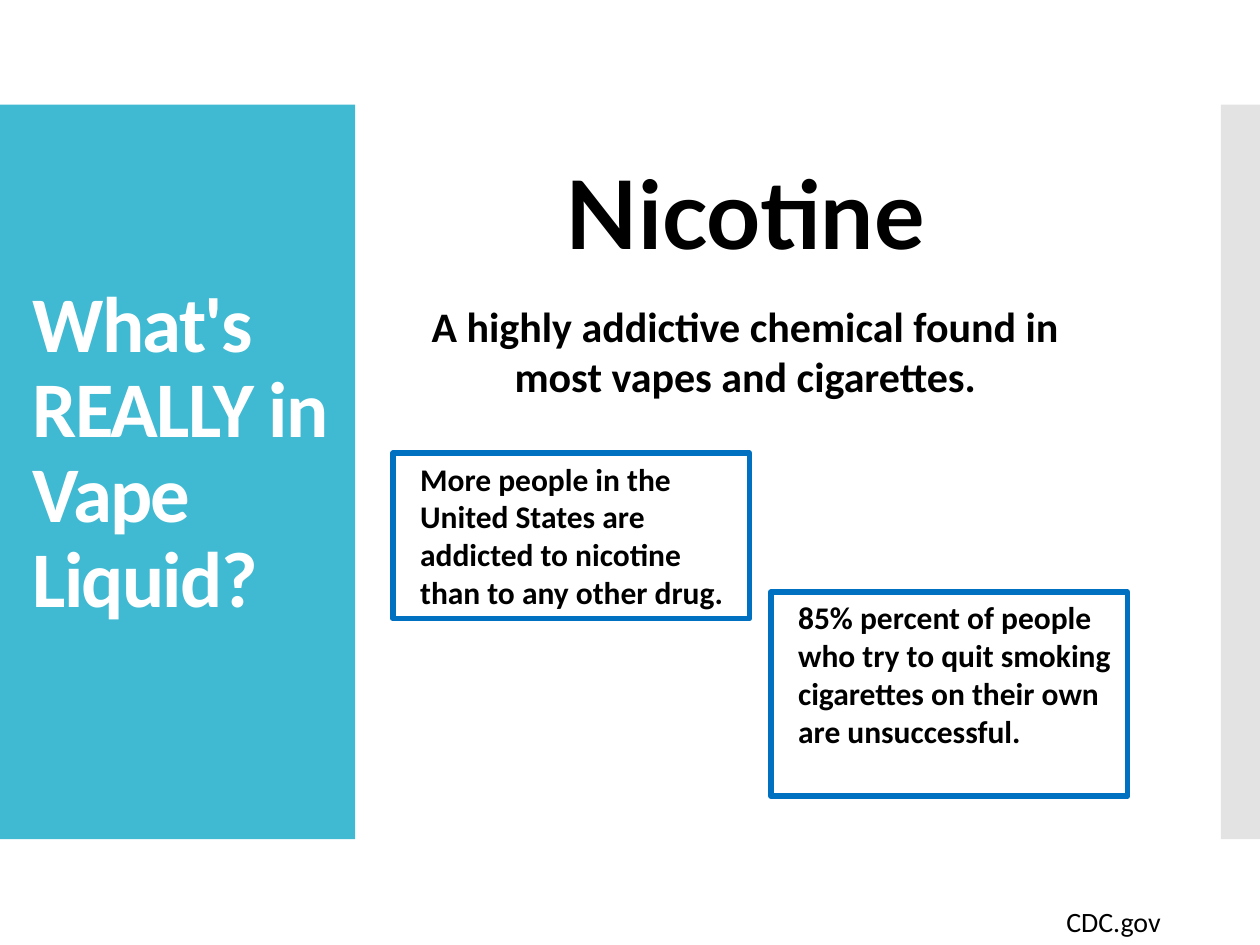
from pptx import Presentation
from pptx.dml.color import RGBColor
from pptx.enum.shapes import MSO_SHAPE
from pptx.enum.text import MSO_ANCHOR, PP_ALIGN
from pptx.util import Cm, Pt

RECTANGLE = MSO_SHAPE.RECTANGLE
TOP, BOTTOM = MSO_ANCHOR.TOP, MSO_ANCHOR.BOTTOM
LEFT, CENTER, RIGHT = PP_ALIGN.LEFT, PP_ALIGN.CENTER, PP_ALIGN.RIGHT

BLACK, WHITE = "000000", "FFFFFF"
TEAL, GRAY, BLUE = "40BAD2", "E3E3E3", "0070C0"


def color(hex_code):
    return RGBColor.from_string(hex_code)


def add_rectangle(s, x, y, w, h, fill=None, line=None):
    sp = s.shapes.add_shape(RECTANGLE, Cm(x), Cm(y), Cm(w), Cm(h))
    sp.shadow.inherit = False
    if fill:
        sp.fill.solid()
        sp.fill.fore_color.rgb = color(fill)
    else:
        sp.fill.background()
    if line:
        sp.line.color.rgb = color(line)
        sp.line.width = Pt(3.25)
    else:
        sp.line.fill.background()
    return sp


def add_text_box(s, x, y, w, h, anchor=TOP):
    tf = s.shapes.add_textbox(Cm(x), Cm(y), Cm(w), Cm(h)).text_frame
    tf.word_wrap = True
    tf.vertical_anchor = anchor
    return tf


def style_paragraph(p, size, font="Calibri", hex_code=BLACK, bold=True,
                    align=LEFT, indent=0):
    p.alignment = align
    if indent:
        p._p.get_or_add_pPr().set("marL", str(Cm(indent)))
    for r in p.runs:
        r.font.name = font
        r.font.size = Pt(size)
        r.font.bold = bold
        r.font.color.rgb = color(hex_code)


def add_title(s, text):
    tf = add_text_box(s, 0.41, 5.38, 6.76, 7.34, BOTTOM)
    tf.text = text
    p = tf.paragraphs[0]
    p.line_spacing = 0.9
    style_paragraph(p, 45, hex_code=WHITE)
    p.runs[0].font._element.set("spc", "-100")


def add_definition(s, term, meaning):
    tf = add_text_box(s, 6.48, 3, 15.95, 10.03)
    tf.text = term
    heading = tf.paragraphs[0]
    heading.space_after = Pt(14.2)
    style_paragraph(heading, 54, "Lato", align=CENTER, indent=1.14)
    p = tf.add_paragraph()
    p.text = meaning
    p.space_before = Pt(4)
    style_paragraph(p, 24, align=CENTER, indent=1.14)


def add_fact(s, x, y, h, text):
    tf = add_rectangle(s, x, y, 7.19, h, line=BLUE).text_frame
    tf.word_wrap = True
    tf.vertical_anchor = TOP
    tf.text = text
    style_paragraph(tf.paragraphs[0], 18, indent=0.3)


def add_credit(s, text):
    tf = add_text_box(s, 20.22, 17.55, 3.43, 1.5, BOTTOM)
    tf.text = text
    p = tf.paragraphs[0]
    p.line_spacing = 0.9
    style_paragraph(p, 16, bold=False, align=RIGHT)


def main():
    prs = Presentation()
    prs.slide_width, prs.slide_height = Cm(25.4), Cm(19.05)
    s = prs.slides.add_slide(prs.slide_layouts[6])

    add_rectangle(s, 0, 2.11, 7.16, 14.81, fill=TEAL)
    add_rectangle(s, 24.61, 2.11, 0.79, 14.81, fill=GRAY)
    add_title(s, "What's REALLY in Vape Liquid?")
    add_credit(s, "CDC.gov")
    add_definition(
        s, "Nicotine",
        "A highly addictive chemical found in most vapes and cigarettes.")
    add_fact(s, 15.54, 11.94, 4.11,
             "85% percent of people who try to quit smoking cigarettes "
             "on their own are unsuccessful.")
    add_fact(s, 7.92, 9.14, 3.33,
             "More people in the United States are addicted to nicotine "
             "than to any other drug.")
    prs.save("out.pptx")


if __name__ == "__main__":
    main()
